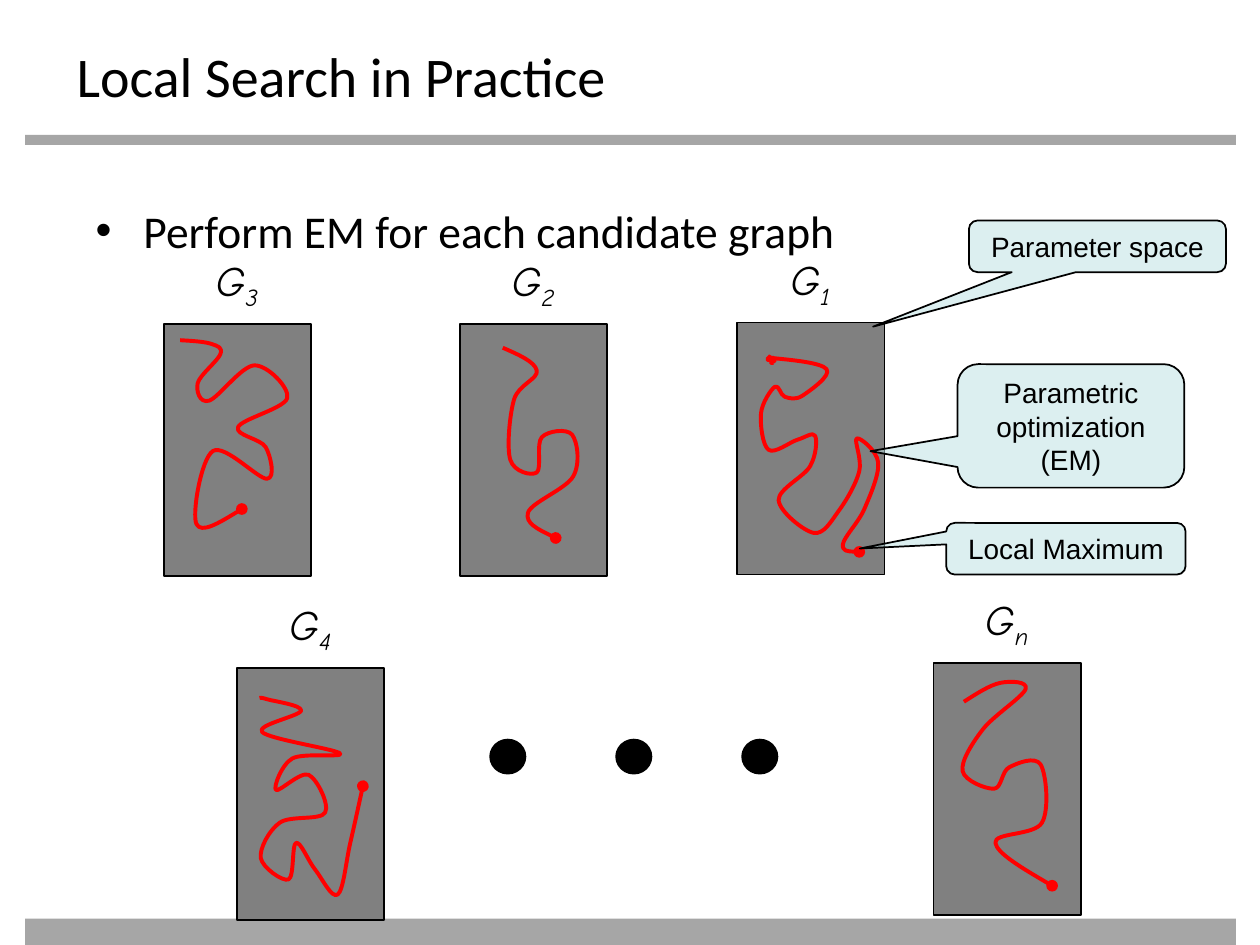
import pptx
import pptx.util
from lxml import etree
from pptx.dml.color import RGBColor
from pptx.enum.shapes import MSO_SHAPE
from pptx.enum.text import MSO_ANCHOR, MSO_AUTO_SIZE, PP_ALIGN
from pptx.oxml.ns import qn
from pptx.util import Inches

BLACK = RGBColor(0x00, 0x00, 0x00)
GRAY = RGBColor(0x80, 0x80, 0x80)
SILVER = RGBColor(0xA6, 0xA6, 0xA6)
RED = RGBColor(0xFF, 0x00, 0x00)
AQUA = RGBColor(0xBB, 0xE0, 0xE3)

# Label, left, top of a panel, then the points its search curve runs through
PANELS = [
    ("1", 5.85, 2.56, [
        (6.11, 2.84), (6.56, 2.93), (6.37, 3.14), (6.23, 3.15), (6.15, 3.07),
        (6.04, 3.28), (6.1, 3.57), (6.33, 3.49), (6.47, 3.46), (6.43, 3.7),
        (6.18, 3.97), (6.46, 4.23), (6.66, 4.05), (6.82, 3.74), (6.8, 3.48),
        (6.97, 3.67), (6.86, 4.04), (6.69, 4.32), (6.82, 4.38)]),
    ("3", 1.3, 2.57, [
        (1.43, 2.7), (1.68, 2.73), (1.75, 2.81), (1.57, 3.04), (1.66, 3.18),
        (2.02, 2.9), (2.28, 3.16), (1.89, 3.39), (2.11, 3.55), (2.12, 3.8),
        (1.69, 3.58), (1.56, 4.16), (1.92, 4.04)]),
    ("2", 3.65, 2.57, [
        (3.99, 2.76), (4.26, 2.94), (4.08, 3.17), (4.05, 3.65), (4.26, 3.75),
        (4.3, 3.47), (4.54, 3.45), (4.55, 3.78), (4.19, 4.07), (4.41, 4.27)]),
    ("4", 1.88, 5.3, [
        (2.06, 5.54), (2.12, 5.55), (2.39, 5.64), (2.08, 5.81), (2.7, 5.98),
        (2.32, 6.02), (2.19, 6.27), (2.45, 6.15), (2.58, 6.45), (2.22, 6.53),
        (2.07, 6.81), (2.29, 6.98), (2.35, 6.69), (2.5, 6.9), (2.68, 7.1),
        (2.78, 6.69), (2.88, 6.24)]),
    ("n", 7.41, 5.26, [
        (7.65, 5.57), (7.94, 5.42), (8.14, 5.47), (7.8, 5.79), (7.64, 6.12),
        (7.89, 6.26), (8.01, 6.09), (8.26, 6.07), (8.27, 6.53), (7.9, 6.69),
        (8.35, 7.03)]),
]
KNOT = [
    (6.14, 2.88), (6.12, 2.88), (6.13, 2.87), (6.14, 2.87), (6.15, 2.86),
    (6.14, 2.86), (6.12, 2.86), (6.12, 2.85), (6.14, 2.84), (6.12, 2.84),
    (6.11, 2.84), (6.1, 2.85), (6.1, 2.86), (6.09, 2.85), (6.1, 2.84),
    (6.11, 2.83), (6.1, 2.83)]
CALLS = [
    ("Parametric optimization (EM)", (7.6, 2.89, 1.8, 0.98), (-0.884, 0.205), True),
    ("Parameter space", (7.69, 1.75, 2.04, 0.41), (-0.873, 1.556), False),
    ("Local Maximum", (7.51, 4.15, 1.9, 0.41), (-0.861, -0.004), False),
]


def write(frame, text, sub="", font="Calibri", size=16, italic=False,
          align=PP_ALIGN.LEFT, wrap=True, grow=False, bullet=None):
    """Fill a text frame with one paragraph, ending in an optional subscript."""
    frame.word_wrap = wrap
    if grow:
        frame.auto_size = MSO_AUTO_SIZE.SHAPE_TO_FIT_TEXT
    para = frame.paragraphs[0]
    para.alignment = align
    if bullet:
        props = para._p.get_or_add_pPr()
        props.set("marL", str(Inches(0.38)))
        props.set("indent", str(-Inches(0.38)))
        etree.SubElement(props, qn("a:buFont"), typeface="Arial")
        etree.SubElement(props, qn("a:buChar"), char=bullet)
    for part in filter(None, (text, sub)):
        run = para.add_run()
        run.text = part
        run.font.name = font
        run.font.size = pptx.util.Pt(size)
        run.font.italic = italic
        run.font.color.rgb = BLACK
    if sub:
        run.font._element.set("baseline", "-25000")


def bend(pts):
    """Return the cubic control and end points of a smooth curve through pts."""
    def shift(i, sign):
        (ax, ay), (x, y), (bx, by) = pts[i - 1:i + 2]
        return x + sign * (bx - ax) / 6, y + sign * (by - ay) / 6

    def mid(a, b):
        return (a[0] + b[0]) / 2, (a[1] + b[1]) / 2

    out, last = [], len(pts) - 1
    for i in range(last):
        one = shift(i, 1) if i else mid(pts[0], shift(1, -1))
        two = shift(i + 1, -1) if i + 1 < last else mid(one, pts[last])
        out += [one, two, pts[i + 1]]
    return out


class Deck:
    """Holds the line style and the current slide."""

    def __init__(self, slide):
        self.shapes = slide.shapes
        self.thin, self.thick = pptx.util.Pt(1), pptx.util.Pt(2.25)

    def shape(self, kind, box, fill, line=BLACK):
        item = self.shapes.add_shape(kind, *map(Inches, box))
        item.shadow.inherit = False
        item.fill.solid()
        item.fill.fore_color.rgb = fill
        if line is None:
            item.line.fill.background()
        else:
            item.line.color.rgb = line
            item.line.width = self.thin
        return item

    def text(self, box, text, **form):
        item = self.shapes.add_textbox(*map(Inches, box))
        write(item.text_frame, text, **form)

    def call(self, text, box, tip, wrap):
        item = self.shape(MSO_SHAPE.ROUNDED_RECTANGULAR_CALLOUT, box, AQUA)
        for i, value in enumerate((*tip, 0.167)):
            item.adjustments[i] = value
        tint = item._element.spPr.find(qn("a:solidFill"))[0]
        etree.SubElement(tint, qn("a:alpha"), val="50000")
        item.text_frame.vertical_anchor = MSO_ANCHOR.MIDDLE
        write(item.text_frame, text, font="Arial", align=PP_ALIGN.CENTER,
              wrap=wrap, grow=True)

    def curve(self, pts, dot=True):
        pen = self.shapes.build_freeform(*map(Inches, pts[0]))
        pen.add_line_segments([tuple(map(Inches, p)) for p in bend(pts)], close=False)
        item = pen.convert_to_shape()
        item.shadow.inherit = False
        item.fill.background()
        item.line.color.rgb = RED
        item.line.width = self.thick
        route = next(item._element.spPr.iter(qn("a:path")))
        steps = route.findall(qn("a:lnTo"))
        for i in range(0, len(steps), 3):
            cubic = etree.SubElement(route, qn("a:cubicBezTo"))
            for step in steps[i:i + 3]:
                cubic.append(step[0])
                route.remove(step)
        if dot:
            etree.SubElement(item.line._ln, qn("a:tailEnd"), type="oval")

    def panel(self, name, left, top, pts):
        self.shape(MSO_SHAPE.RECTANGLE, (left, top, 1.17, 2), GRAY)
        self.text((left + 0.3, top - 0.6, 0.56, 0.57), "G", sub=name,
                  font="Comic Neue", size=24, italic=True,
                  align=PP_ALIGN.CENTER, wrap=False, grow=True)
        self.curve(pts)


def main():
    show = pptx.Presentation()
    show.slide_width, show.slide_height = Inches(10), Inches(7.5)
    deck = Deck(show.slides.add_slide(show.slide_layouts[6]))
    for top, high in ((1.07, 0.08), (7.29, 0.21)):
        deck.shape(MSO_SHAPE.RECTANGLE, (0.2, top, 9.61, high), SILVER, line=None)
    deck.text((0.51, 0.28, 9, 0.55), "Local Search in Practice", size=32)
    for panel in PANELS:
        deck.panel(*panel)
    deck.curve(KNOT, dot=False)
    for call in CALLS:
        deck.call(*call)
    for i in range(3):
        deck.shape(MSO_SHAPE.OVAL, (3.89 + i, 5.87, 0.28, 0.27), BLACK)
    deck.text((0.66, 1.56, 8.75, 0.58), "Perform EM for each candidate graph",
              size=26, bullet="•")
    show.save("out.pptx")


if __name__ == "__main__":
    main()
